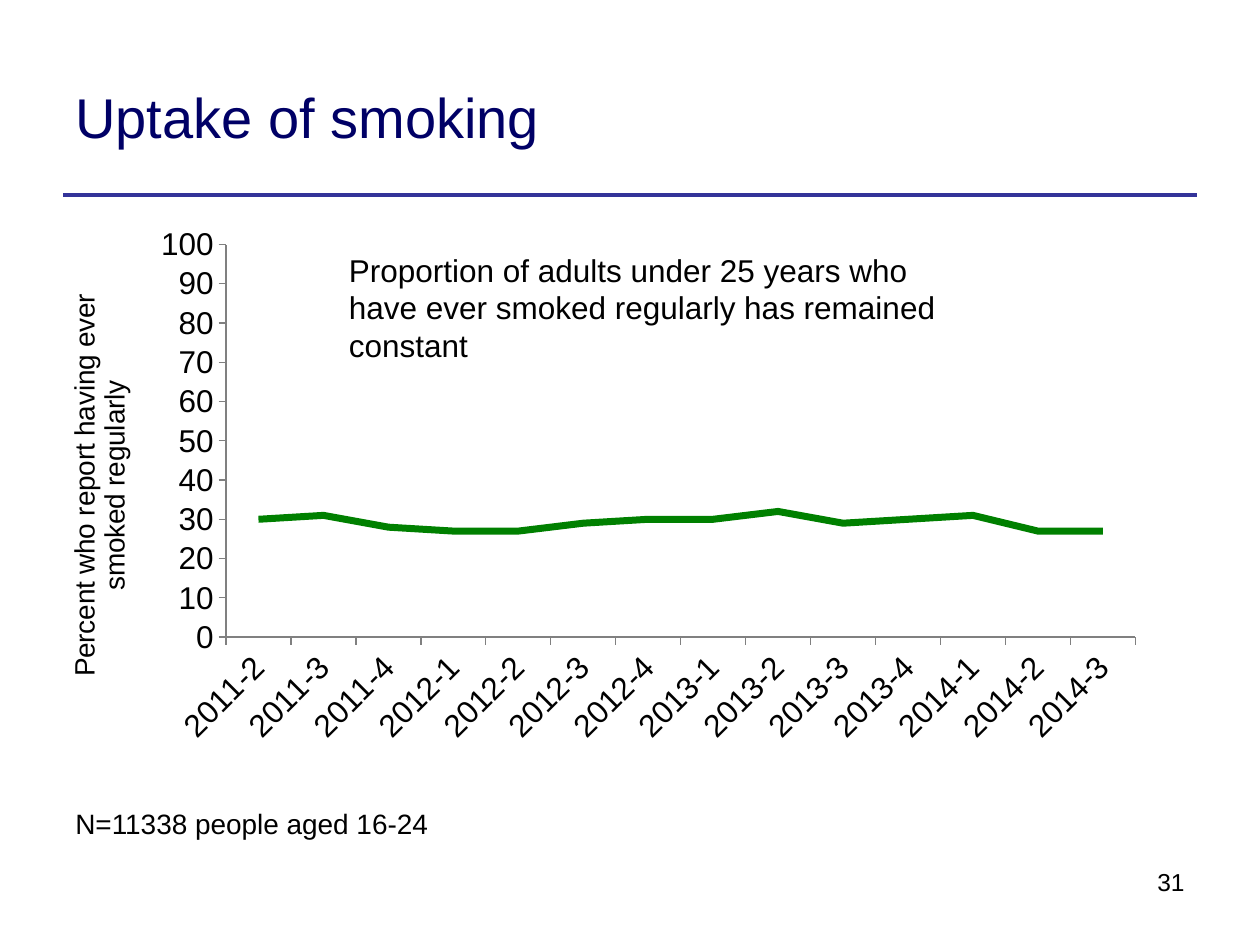
"""Build the slide on the uptake of smoking, with a line chart of quarterly rates."""
from lxml import etree
from pptx import Presentation
from pptx.chart.data import CategoryChartData
from pptx.dml.color import RGBColor
from pptx.enum.chart import XL_CHART_TYPE, XL_MARKER_STYLE, XL_TICK_MARK
from pptx.enum.shapes import MSO_CONNECTOR
from pptx.enum.text import MSO_ANCHOR, PP_ALIGN
from pptx.oxml.ns import qn
from pptx.util import Inches, Pt

LINE_CHART = XL_CHART_TYPE.LINE
NO_MARKER = XL_MARKER_STYLE.NONE
OUTSIDE, NO_TICK = XL_TICK_MARK.OUTSIDE, XL_TICK_MARK.NONE
STRAIGHT = MSO_CONNECTOR.STRAIGHT
TOP, MIDDLE = MSO_ANCHOR.TOP, MSO_ANCHOR.MIDDLE
LEFT, RIGHT = PP_ALIGN.LEFT, PP_ALIGN.RIGHT

WIDTH, HEIGHT = 10, 7.5
MARGIN = 0.05 * WIDTH
FONT = "Arial"
COLORS = {"title": "000066", "rule": "333399", "text": "000000",
          "series": "008000", "axis": "808080"}

TEXTS = [
    {"text": "Uptake of smoking", "box": (MARGIN, 0.3, 7.89, 1.25),
     "size": 32, "color": "title", "anchor": MIDDLE},
    {"text": "31", "box": (6.73, 6.83, 2.77, 0.52), "size": 14, "align": RIGHT},
    {"text": "N=11338 people aged 16-24", "box": (MARGIN, 6.35, 3.03, 0.37),
     "size": 16, "wrap": False},
    {"text": "Proportion of adults under 25 years who have ever smoked "
             "regularly has remained constant",
     "box": (2.67, 1.94, 5.1, 1.01), "size": 18},
]
RULE_TOP = 1.55
CHART_BOX = (0.48, 1.71, 9, 4.37)
PLOT_SHARES = {"x": 0.146, "y": 0.053, "w": 0.802, "h": 0.713}
AXIS_TITLE = "Percent who report having ever smoked regularly"
FIRST_YEAR, FIRST_QUARTER = 2011, 2
RATES = [30, 31, 28, 27, 27, 29, 30, 30, 32, 29, 30, 31, 27, 27]
VALUE_AXIS = {"minimum_scale": 0, "maximum_scale": 100, "major_unit": 10}
AXIS = {"has_major_gridlines": False, "major_tick_mark": OUTSIDE,
        "minor_tick_mark": NO_TICK}


def apply(target, values):
    for name, value in values.items():
        setattr(target, name, value)


def color(name):
    return RGBColor.from_string(COLORS[name])


def style_font(font, size, name="text"):
    apply(font, {"name": FONT, "size": Pt(size), "bold": False})
    font.color.rgb = color(name)


def style_line(line, name, width):
    line.color.rgb = color(name)
    line.width = Pt(width)


def add_text(slide, item):
    frame = slide.shapes.add_textbox(*map(Inches, item["box"])).text_frame
    apply(frame, {"word_wrap": item.get("wrap", True),
                  "vertical_anchor": item.get("anchor", TOP)})
    paragraph = frame.paragraphs[0]
    apply(paragraph, {"text": item["text"], "alignment": item.get("align", LEFT)})
    style_font(paragraph.runs[0].font, item["size"], item.get("color", "text"))


def add_rule(slide):
    rule = slide.shapes.add_connector(
        STRAIGHT, Inches(MARGIN), Inches(RULE_TOP),
        Inches(WIDTH - MARGIN), Inches(RULE_TOP))
    style_line(rule.line, "rule", 2.25)
    etree.SubElement(rule._element.spPr, qn("a:effectLst"))


def place_plot(chart):
    plot_area = chart._chartSpace.chart.plotArea
    for layout in plot_area.findall(qn("c:layout")):
        plot_area.remove(layout)
    layout = etree.Element(qn("c:layout"))
    manual = etree.SubElement(layout, qn("c:manualLayout"))
    settings = {"layoutTarget": "inner", "xMode": "edge", "yMode": "edge", **PLOT_SHARES}
    for tag, value in settings.items():
        etree.SubElement(manual, qn(f"c:{tag}")).set("val", str(value))
    plot_area.insert(0, layout)


def add_rate_chart(slide):
    data = CategoryChartData()
    quarters = range(FIRST_QUARTER - 1, FIRST_QUARTER - 1 + len(RATES))
    data.categories = [f"{FIRST_YEAR + q // 4}-{q % 4 + 1}" for q in quarters]
    data.add_series("Series 1", RATES)
    chart = slide.shapes.add_chart(LINE_CHART, *map(Inches, CHART_BOX), data).chart
    apply(chart, {"has_legend": False, "has_title": False})
    style_font(chart.font, 18)
    chart.plots[0].vary_by_categories = False
    series = chart.plots[0].series[0]
    series.smooth = False
    series.marker.style = NO_MARKER
    style_line(series.format.line, "series", 4)
    for axis in (chart.category_axis, chart.value_axis):
        apply(axis, AXIS)
        style_line(axis.format.line, "axis", 0.75)
        style_font(axis.tick_labels.font, 18)
    chart.category_axis._element.txPr.find(qn("a:bodyPr")).set("rot", "-2700000")
    apply(chart.value_axis, VALUE_AXIS)
    title = chart.value_axis.axis_title.text_frame
    title.text = AXIS_TITLE
    style_font(title.paragraphs[0].runs[0].font, 16)
    place_plot(chart)


def main():
    presentation = Presentation()
    apply(presentation, {"slide_width": Inches(WIDTH), "slide_height": Inches(HEIGHT)})
    slide = presentation.slides.add_slide(presentation.slide_layouts[6])
    add_rule(slide)
    add_rate_chart(slide)
    for item in TEXTS:
        add_text(slide, item)
    presentation.save("out.pptx")


if __name__ == "__main__":
    main()
